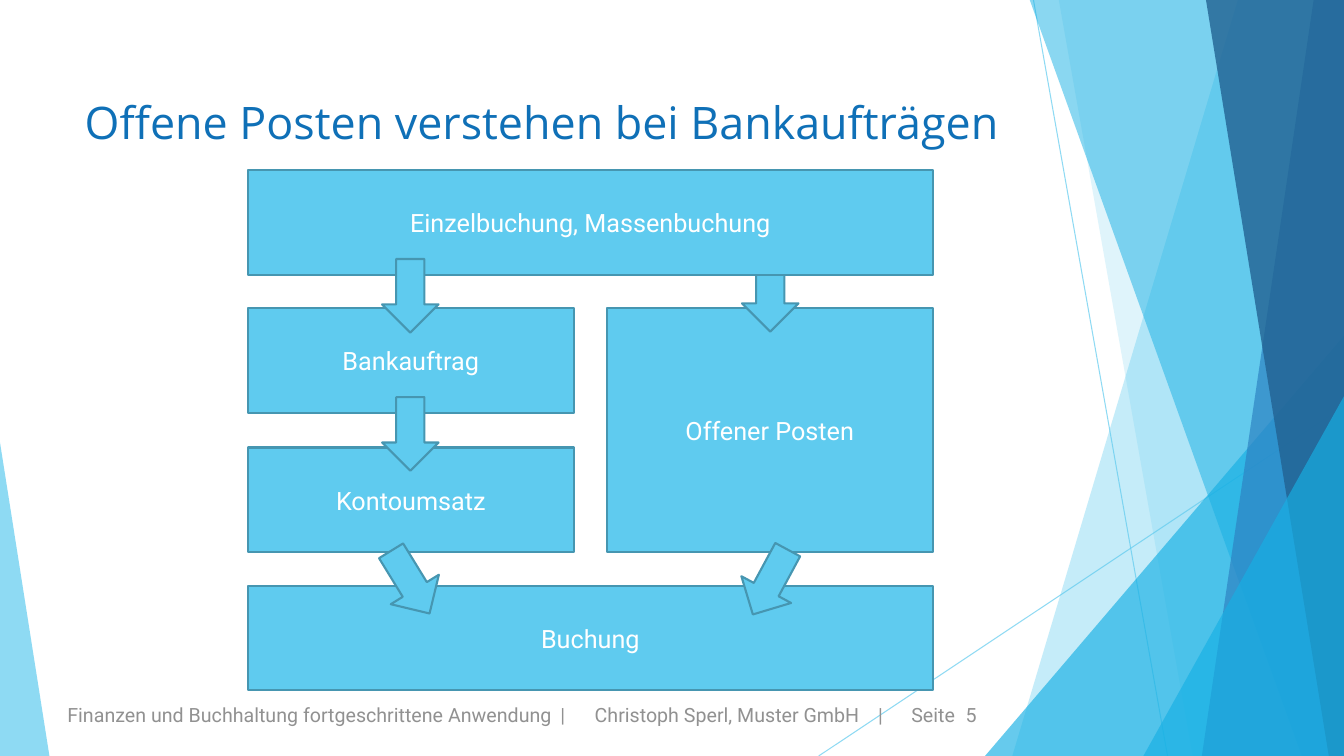
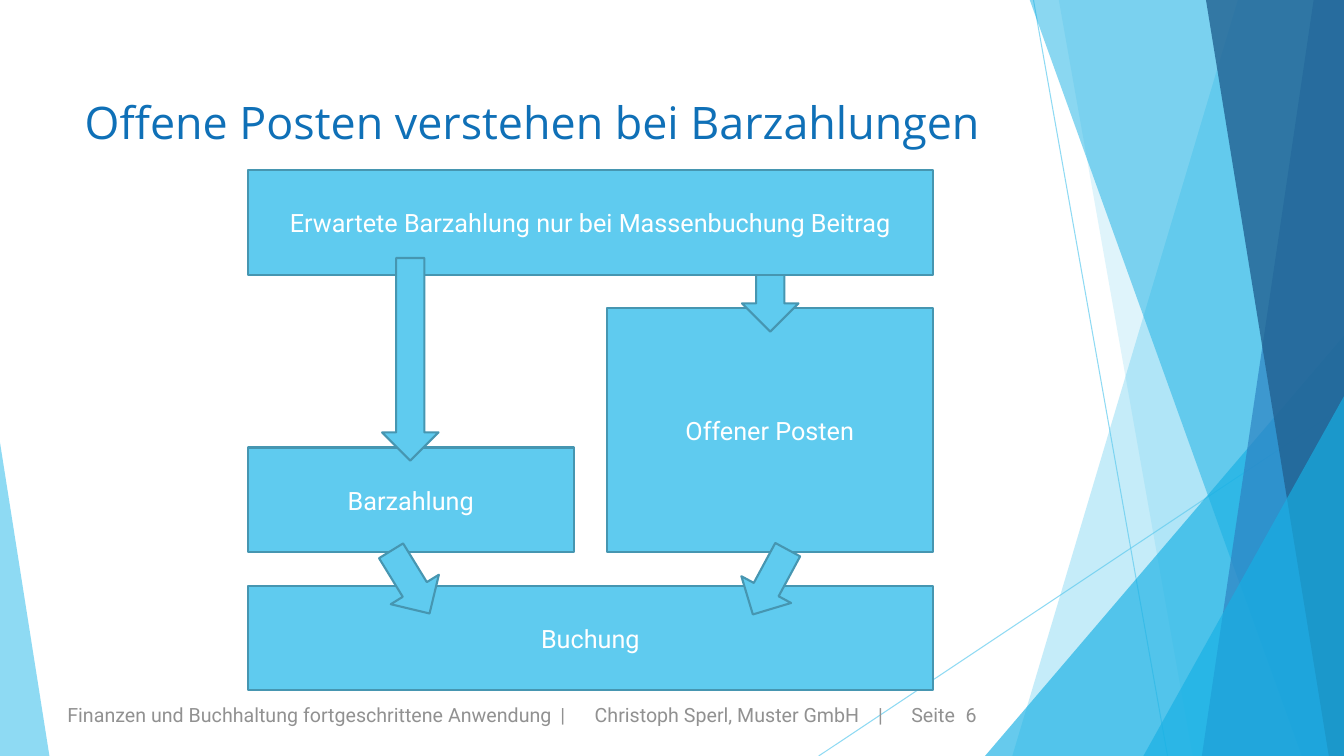
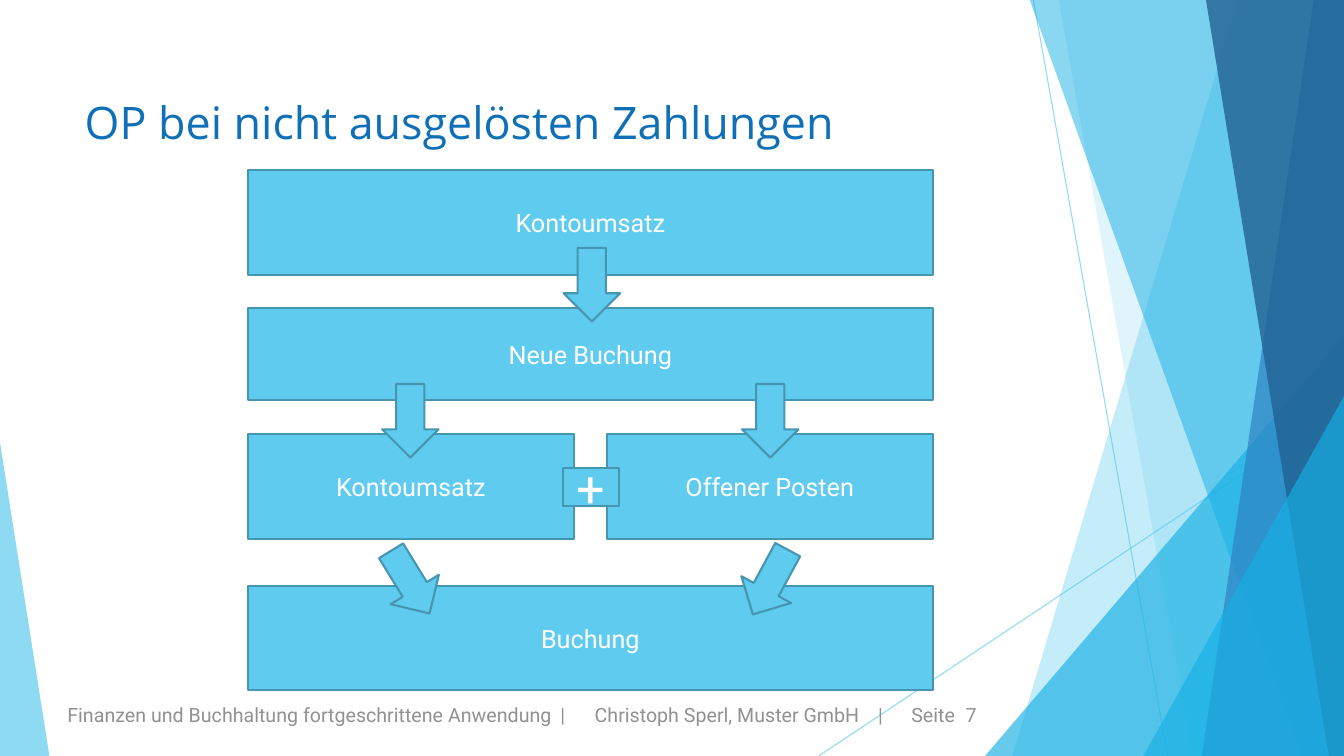
"""Build three slides that explain how open items arise from bookings."""
from dataclasses import dataclass

from lxml import etree
from pptx import Presentation
from pptx import util as u
from pptx.dml.color import RGBColor
from pptx.enum import shapes, text
from pptx.oxml import ns

PX = 9144
WIDTH, HEIGHT = 1333, 750
COLUMN, GUTTER, ROW = 323, 33, 104
LEFT = 246
RIGHT = LEFT + COLUMN + GUTTER
FULL = 2 * COLUMN + GUTTER
LEFT_MID, RIGHT_MID, CENTER = LEFT + 161, RIGHT + 162, LEFT + 341
ROW_TOPS = [169 + n * 275 // 2 for n in range(4)]
ARROW_WIDTH, ARROW_HEIGHT = 56, 73
FOOTER_STOPS = (489, 523, 804, 837, 891)


@dataclass(frozen=True)
class Theme:
    sky: str = "5FCBEF"
    cyan: str = "17B0E4"
    blue: str = "2E83C3"
    navy: str = "226292"
    outline: str = "4696B1"
    heading: str = "0F70B7"
    muted: str = "919191"
    white: str = "FFFFFF"
    title_font: str = "Open Sans"
    body_font: str = "Roboto"
    title_size: int = 32
    box_size: int = 18
    plus_size: int = 36
    footer_size: int = 14
    outline_width: float = 1.5
    hairline: float = 0.75


THEME = Theme()


def px(*lengths):
    return [u.Emu(length * PX) for length in lengths]


def add_run(paragraph, content, size, color, font=THEME.body_font):
    run = paragraph.add_run()
    run.text = content
    run.font.size = u.Pt(size)
    run.font.name = font
    run.font.color.rgb = RGBColor.from_string(color)


def paint(fill, color, opacity=100):
    fill.solid()
    fill.fore_color.rgb = RGBColor.from_string(color)
    if opacity < 100:
        for rgb in fill._xPr.iter(ns.qn("a:srgbClr")):
            etree.SubElement(rgb, ns.qn("a:alpha"), val=str(opacity * 1000))


def add_ray(slide, start, end):
    ray = slide.shapes.add_connector(shapes.MSO_CONNECTOR.STRAIGHT, *px(*start, *end))
    ray.line.width = u.Pt(THEME.hairline)
    paint(ray.line.fill, THEME.sky, 70)
    etree.SubElement(ray._element.spPr, ns.qn("a:effectLst"))
    return ray


def finish_facet(facet, color, opacity):
    paint(facet.fill, color, opacity)
    facet.line.fill.background()
    facet.shadow.inherit = False
    return facet


def add_band(slide, top_left, bottom_left, bottom_right, color, opacity):
    outline = slide.shapes.build_freeform(top_left, -1, scale=PX)
    outline.add_line_segments(
        [(WIDTH, -1), (bottom_right, HEIGHT), (bottom_left, HEIGHT)], close=True)
    return finish_facet(outline.convert_to_shape(), color, opacity)


def add_corner(slide, left, top, width, peak, color, opacity):
    corner = slide.shapes.add_shape(
        shapes.MSO_SHAPE.ISOSCELES_TRIANGLE, *px(left, top, width, HEIGHT - top))
    corner.adjustments[0] = peak
    return finish_facet(corner, color, opacity)


def add_backdrop(layout, slide):
    facets = [
        add_ray(slide, (1025, 0), (1158, HEIGHT)),
        add_ray(slide, (WIDTH, 403), (812, HEIGHT)),
        add_band(slide, 1228, 1004, WIDTH, THEME.sky, 36),
        add_band(slide, 1050, 1183, WIDTH, THEME.sky, 20),
        add_corner(slide, 977, 333, 356, 1, THEME.cyan, 66),
        add_band(slide, 1021, 1291, WIDTH, THEME.cyan, 50),
        add_band(slide, 1303, 1192, WIDTH, THEME.blue, 70),
        add_band(slide, 1196, 1318, WIDTH, THEME.navy, 80),
        add_corner(slide, 1134, 393, 199, 1, THEME.cyan, 66),
        add_corner(slide, 0, 439, 49, 0, THEME.sky, 70),
    ]
    for position, facet in enumerate(facets, start=2):
        layout.shapes.element.insert(position, facet._element)


def add_title(slide, content):
    title = slide.shapes.title
    title.left, title.top, title.width, title.height = px(74, 89, 940, 69)
    frame = title.text_frame
    frame.auto_size = text.MSO_AUTO_SIZE.NONE
    frame.vertical_anchor = text.MSO_ANCHOR.TOP
    paragraph = frame.paragraphs[0]
    paragraph.alignment = text.PP_ALIGN.LEFT
    add_run(paragraph, content, THEME.title_size, THEME.heading, THEME.title_font)


def add_footer(slide, number):
    frame = slide.shapes.add_textbox(*px(57, 692, 1036, 34)).text_frame
    frame.word_wrap = True
    paragraph = frame.paragraphs[0]
    stops = etree.SubElement(paragraph._p.get_or_add_pPr(), ns.qn("a:tabLst"))
    for stop in FOOTER_STOPS:
        etree.SubElement(stops, ns.qn("a:tab"), pos=str(stop * PX), algn="l")
    parts = ("Finanzen und Buchhaltung fortgeschrittene Anwendung", "|",
             "Christoph Sperl, Muster GmbH", "|", "Seite", str(number))
    add_run(paragraph, "\t".join(parts), THEME.footer_size, THEME.muted)


def add_step(slide, kind, left, top, width, height):
    step = slide.shapes.add_shape(kind, *px(left, top, width, height))
    step.shadow.inherit = False
    paint(step.fill, THEME.sky)
    paint(step.line.fill, THEME.outline)
    step.line.width = u.Pt(THEME.outline_width)
    return step


def add_box(slide, label, left, top, width=COLUMN, height=ROW, size=THEME.box_size):
    box = add_step(slide, shapes.MSO_SHAPE.RECTANGLE, left, top, width, height)
    frame = box.text_frame
    frame.word_wrap = True
    frame.vertical_anchor = text.MSO_ANCHOR.MIDDLE
    frame.paragraphs[0].alignment = text.PP_ALIGN.CENTER
    add_run(frame.paragraphs[0], label, size, THEME.white)
    return frame


def add_arrow(slide, middle, top, height=ARROW_HEIGHT, rotation=0):
    arrow = add_step(slide, shapes.MSO_SHAPE.DOWN_ARROW,
                     middle - ARROW_WIDTH // 2, top, ARROW_WIDTH, height)
    arrow.rotation = rotation


def add_plus(slide):
    frame = add_box(slide, "+", 558, 464, 56, 38, THEME.plus_size)
    frame.margin_left = frame.margin_right = 0
    frame.margin_top = frame.margin_bottom = 0


def add_frame_steps(slide, source):
    add_box(slide, source, LEFT, ROW_TOPS[0], FULL)
    add_box(slide, "Buchung", LEFT, ROW_TOPS[3], FULL)
    add_arrow(slide, LEFT_MID, 541, rotation=328.5)
    add_arrow(slide, RIGHT_MID, 541, rotation=28.3)


def add_open_item(slide):
    top = ROW_TOPS[1]
    add_box(slide, "Offener Posten", RIGHT, top, height=ROW_TOPS[2] + ROW - top)
    add_arrow(slide, RIGHT_MID, 256)


def draw_bank_orders(slide):
    add_box(slide, "Bankauftrag", LEFT, ROW_TOPS[1])
    add_box(slide, "Kontoumsatz", LEFT, ROW_TOPS[2])
    add_open_item(slide)
    add_frame_steps(slide, "Einzelbuchung, Massenbuchung")
    for top in (257, 394):
        add_arrow(slide, LEFT_MID, top)


def draw_cash_payments(slide):
    add_box(slide, "Barzahlung", LEFT, ROW_TOPS[2])
    add_open_item(slide)
    add_frame_steps(slide, "Erwartete Barzahlung nur bei Massenbuchung Beitrag")
    add_arrow(slide, LEFT_MID, 256, height=201)


def draw_untriggered_payments(slide):
    add_box(slide, "Neue Buchung", LEFT, ROW_TOPS[1], FULL, 91)
    add_box(slide, "Kontoumsatz", LEFT, 431)
    add_box(slide, "Offener Posten", RIGHT, 431)
    add_frame_steps(slide, "Kontoumsatz")
    add_arrow(slide, CENTER, 246)
    for middle in (LEFT_MID, RIGHT_MID):
        add_arrow(slide, middle, 381)
    add_plus(slide)


def main():
    deck = Presentation()
    deck.slide_width, deck.slide_height = px(WIDTH, HEIGHT)
    layout = deck.slide_layouts.get_by_name("Title Only")
    topics = (
        ("Offene Posten verstehen bei Bankaufträgen", draw_bank_orders),
        ("Offene Posten verstehen bei Barzahlungen", draw_cash_payments),
        ("OP bei nicht ausgelösten Zahlungen", draw_untriggered_payments),
    )
    for number, (heading, draw) in enumerate(topics, start=5):
        slide = deck.slides.add_slide(layout)
        add_footer(slide, number)
        add_title(slide, heading)
        draw(slide)
    add_backdrop(layout, deck.slides[0])
    deck.save("out.pptx")


if __name__ == "__main__":
    main()
